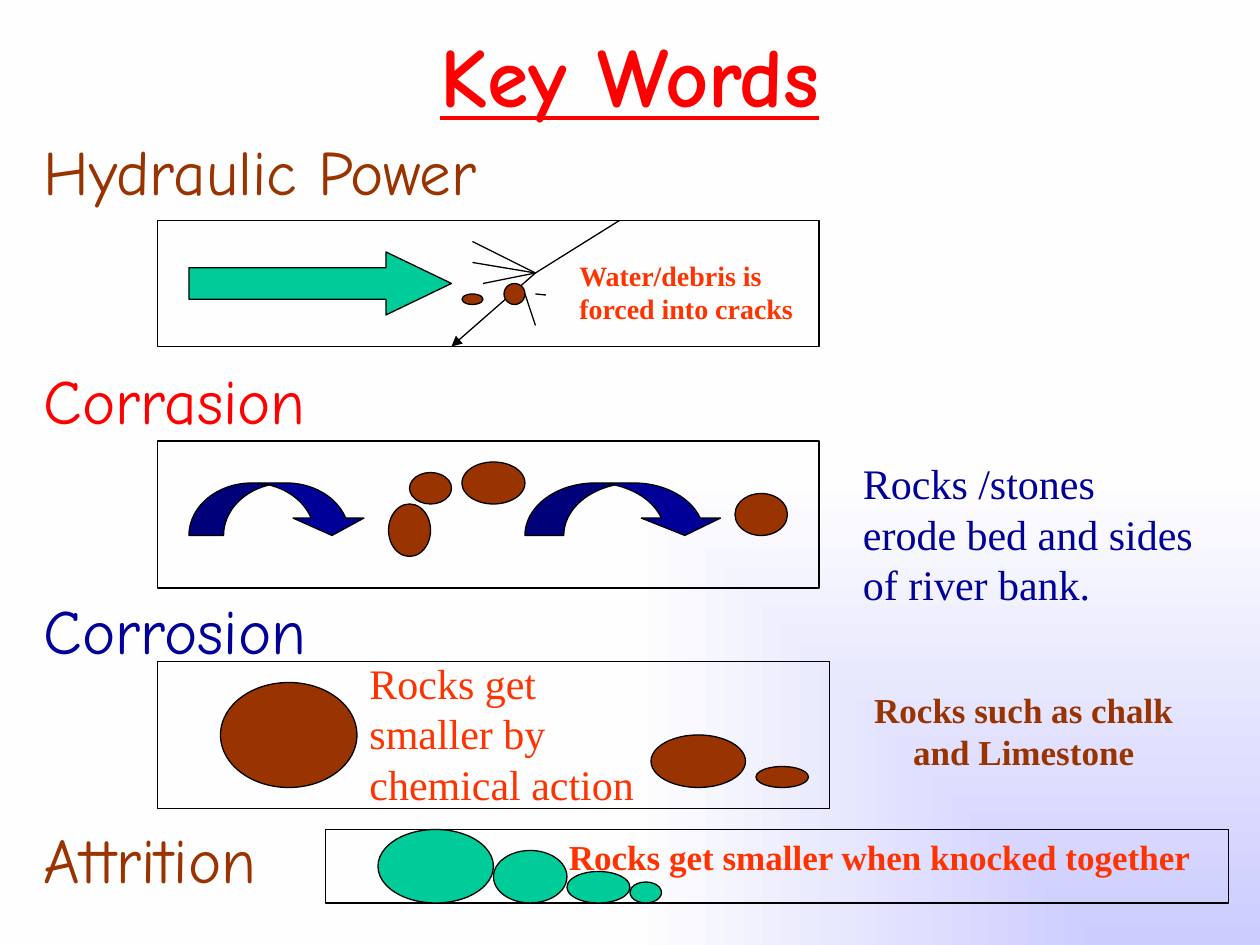
from lxml import etree
from pptx import Presentation
from pptx import util as u
from pptx.dml.color import RGBColor
from pptx.enum import shapes, text
from pptx.oxml import ns

COLOURS = {
    "red": "FF0000", "orange": "FF3300", "brown": "993300", "navy": "000099",
    "green": "00CC99", "black": "000000", "lilac": "CCCCFF", "white": "FEFEFE",
}
TITLE_FONT, BODY_FONT = "Comic Neue", "Times New Roman"


def rgb(name):
    return RGBColor.from_string(COLOURS[name])


def grid(*steps):
    """Lengths on a grid of 120 by 90 steps that covers the page."""
    return [u.Cm(step * 25.4 / 120) for step in steps]


deck = Presentation()
deck.slide_width, deck.slide_height = grid(120, 90)
page = deck.slides.add_slide(deck.slide_layouts[6])

# Background: gradient spreading from the bottom right corner
fill = page.background.fill
fill.gradient()
for stop, colour, position in zip(fill.gradient_stops, ("lilac", "white"), (0, 1)):
    stop.color.rgb = rgb(colour)
    stop.position = position
gradient = page.element.find(".//" + ns.qn("a:gradFill"))
linear = gradient.find(ns.qn("a:lin"))
if linear is not None:
    gradient.remove(linear)
spread = etree.SubElement(gradient, ns.qn("a:path"))
spread.set("path", "rect")
focus = etree.SubElement(spread, ns.qn("a:fillToRect"))
focus.set("l", "100000")
focus.set("t", "100000")

# Frames, arrows and rocks: kind, fill, place, adjustments
kinds = shapes.MSO_SHAPE
frames = [(15, 21, 63, 12), (15, 42, 63, 14), (15, 63, 64, 14), (31, 79, 86, 7)]
water_arrow = (kinds.RIGHT_ARROW, "green", (18, 24, 25, 6), (0.5, 1.04))
bounces = [
    (kinds.CURVED_DOWN_ARROW, "navy", (18, 46, 17, 5), (0.66, 1.35, 0.33)),
    (kinds.CURVED_DOWN_ARROW, "navy", (50, 46, 19, 5), (0.74, 1.51, 0.33)),
]
rocks = [
    (37, 48, 4, 5), (44, 44, 6, 4), (70, 47, 5, 4), (39, 45, 4, 3),  # corrasion
    (21, 65, 13, 10), (62, 70, 9, 5), (72, 73, 5, 2),                # corrosion
]
debris = [(44, 28, 2, 1), (48, 27, 2, 2)]

# Attrition stones stand side by side on the bottom of their frame
stones = []
left, floor = 36, 86
for width, height in [(11, 7), (7, 5), (6, 3), (3, 2)]:
    stones.append((left, floor - height, width, height))
    left += width

# Cracks in the rock face, drawn beneath the debris: start, end
cracks = [
    ((59, 21), (51, 26)), ((51, 26), (43, 33)),
    ((51, 26), (45, 23)), ((51, 26), (45, 25)), ((51, 26), (46, 27)),
    ((50, 28), (51, 31)), ((51, 28), (52, 28.1)),
]
for start, end in cracks:
    crack = page.shapes.add_connector(
        shapes.MSO_CONNECTOR.STRAIGHT, *grid(*start, *end))
    crack.line.color.rgb = rgb("black")
    crack.line.width = u.Pt(0.75)
    properties = crack.element.spPr
    etree.SubElement(properties, ns.qn("a:effectLst"))
    if end == (43, 33):
        head = etree.SubElement(properties.find(ns.qn("a:ln")), ns.qn("a:tailEnd"))
        head.set("type", "triangle")

parts = [(kinds.RECTANGLE, None, frame, ()) for frame in frames]
parts += [water_arrow] + bounces
parts += [(kinds.OVAL, "brown", rock, ()) for rock in rocks + debris]
parts += [(kinds.OVAL, "green", stone, ()) for stone in stones]
for kind, colour, place, adjustments in parts:
    shape = page.shapes.add_shape(kind, *grid(*place))
    shape.shadow.inherit = False
    shape.line.color.rgb = rgb("black")
    shape.line.width = u.Pt(0.75)
    if colour:
        shape.fill.solid()
        shape.fill.fore_color.rgb = rgb(colour)
    else:
        shape.fill.background()
    for index, value in enumerate(adjustments):
        shape.adjustments[index] = value

# Texts: place, font, size, bold, alignment, lines with their colours
LEFT, CENTER = text.PP_ALIGN.LEFT, text.PP_ALIGN.CENTER
headings = [("Hydraulic Power", "brown"), ("Corrasion", "red"),
            ("Corrosion", "navy"), ("Attrition", "brown")]
texts = [
    ((9, 0, 102, 14), TITLE_FONT, 48, True, CENTER, [("Key Words", "red")]),
    ((3, 12, 107, 76), TITLE_FONT, 36, False, LEFT, headings),
    ((54, 24, 23, 8), BODY_FONT, 16, True, LEFT,
     [("Water/debris is forced into cracks", "orange")]),
    ((81, 43, 34, 16), BODY_FONT, 24, False, LEFT,
     [("Rocks /stones erode bed and sides of river bank.", "navy")]),
    ((34, 62, 28, 16), BODY_FONT, 24, False, LEFT,
     [("Rocks get smaller by chemical action", "orange")]),
    ((53, 79, 67, 5), BODY_FONT, 20, True, LEFT,
     [("Rocks get smaller when knocked together", "orange")]),
    ((82, 65, 31, 9), BODY_FONT, 20, True, CENTER,
     [("Rocks such as chalk and Limestone", "brown")]),
]
for place, font, size, bold, alignment, lines in texts:
    box = page.shapes.add_textbox(*grid(*place))
    frame = box.text_frame
    frame.word_wrap = True
    frame.text = "\n".join(words for words, colour in lines)
    for index, (para, (words, colour)) in enumerate(zip(frame.paragraphs, lines)):
        para.alignment = alignment
        para.space_before = u.Pt(88 if index else 0)
        span = para.runs[0]
        span.font.name = font
        span.font.size = u.Pt(size)
        span.font.bold = bold
        span.font.color.rgb = rgb(colour)
        if size == 48:
            span.font.underline = True
            frame.vertical_anchor = text.MSO_ANCHOR.MIDDLE

deck.save("out.pptx")
